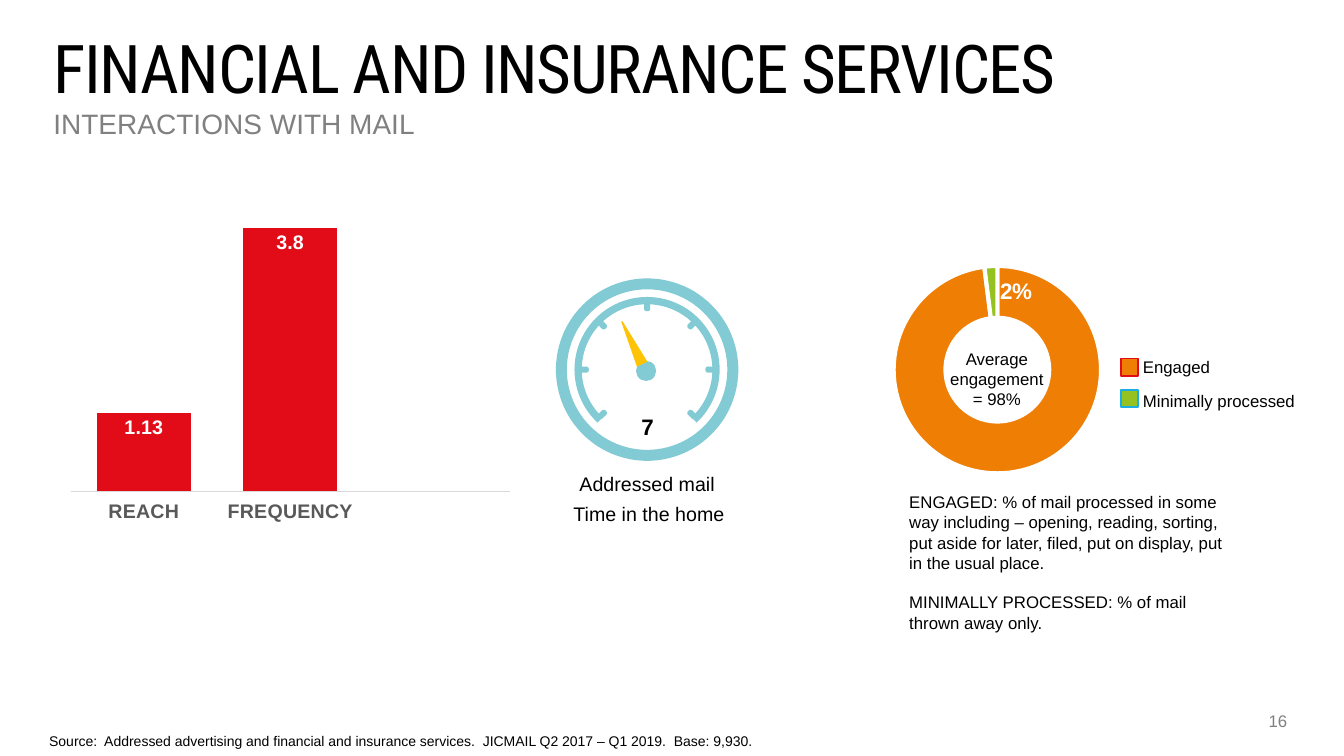
from math import cos, radians, sin

from pptx import Presentation
from pptx.chart.data import CategoryChartData
from pptx.dml.color import RGBColor
from pptx.enum.chart import XL_CHART_TYPE as ChartType, XL_LABEL_POSITION as LabelPosition
from pptx.enum.chart import XL_TICK_LABEL_POSITION as TickLabels, XL_TICK_MARK as TickMark
from pptx.enum.shapes import MSO_SHAPE as Preset
from pptx.enum.text import MSO_ANCHOR as Anchor, MSO_AUTO_SIZE as AutoSize, PP_ALIGN as Align
from pptx.oxml import parse_xml
from pptx.oxml.ns import nsdecls
from pptx.util import Inches, Pt

BLACK, WHITE, GRAY = "000000", "FFFFFF", "808080"
AXIS_TEXT, AXIS_LINE = "595959", "D9D9D9"
RED, ORANGE, GREEN, BLUE = "E20C18", "EF7E05", "95C121", "1BACE4"
TEAL, YELLOW = "82CBD4", "FDC304"


def color(value):
    return RGBColor.from_string(value)


def cells(*counts):
    """Lengths on a grid of 160 columns by 90 rows of square cells."""
    return [Inches(count / 12) for count in counts]


def manual_layout(inner=False, **shares):
    target = '<c:layoutTarget val="inner"/><c:xMode val="edge"/><c:yMode val="edge"/>' if inner else ""
    values = "".join(f'<c:{name} val="{share}"/>' for name, share in shares.items())
    return parse_xml(f'<c:layout {nsdecls("c")}><c:manualLayout>{target}{values}'
                     "</c:manualLayout></c:layout>")


class SlideBuilder:
    font_name = "Arial"

    def __init__(self, presentation):
        self.slide = presentation.slides.add_slide(presentation.slide_layouts[6])

    def style(self, font, size, fill=BLACK, bold=False, name=None):
        font.name = name or self.font_name
        font.size = Pt(size)
        font.bold = bold
        font.color.rgb = color(fill)

    def text(self, place, *lines, size=12, fill=BLACK, bold=False, name=None,
             align=Align.LEFT, fit=False, wrap=True, line_spacing=None, gap=0):
        """Add a text box; a fitted one keeps its insets and grows with its text."""
        frame = self.slide.shapes.add_textbox(*cells(*place)).text_frame
        frame.word_wrap = wrap
        frame.vertical_anchor = Anchor.TOP
        if fit:
            frame.auto_size = AutoSize.SHAPE_TO_FIT_TEXT
        else:
            frame.margin_left = frame.margin_top = frame.margin_right = frame.margin_bottom = 0
        for index, line in enumerate(lines):
            paragraph = frame.add_paragraph() if index else frame.paragraphs[0]
            paragraph.text = line
            paragraph.alignment = align
            if line_spacing:
                paragraph.line_spacing = line_spacing
            if index and gap:
                paragraph.space_before = Pt(gap)
            self.style(paragraph.font, size, fill, bold, name)
        return frame

    def label(self, place, line, **options):
        return self.text(place, line, fit=True, wrap=False, **options)

    def shape(self, preset, place, fill, line=None, rotation=0, adjustments=()):
        shape = self.slide.shapes.add_shape(preset, *cells(*place))
        shape.shadow.inherit = False
        shape.fill.solid()
        shape.fill.fore_color.rgb = color(fill)
        if line:
            shape.line.color.rgb = color(line)
            shape.line.width = Pt(1)
        else:
            shape.line.fill.background()
        shape.rotation = rotation
        for index, value in enumerate(adjustments):
            shape.adjustments[index] = value

    def centered(self, preset, x, y, width, height, **options):
        self.shape(preset, (x - width / 2, y - height / 2, width, height), TEAL, **options)

    def chart(self, kind, place, categories, values, number_format, plot_area):
        data = CategoryChartData(number_format=number_format)
        data.categories = categories
        data.add_series("Series 1", values)
        chart = self.slide.shapes.add_chart(kind, *cells(*place), data).chart
        chart.has_title = chart.has_legend = False
        self.style(chart.font, 10)
        area = chart.plots[0]._element.getparent()
        for layout in area.findall("{*}layout"):
            area.remove(layout)
        area.insert(0, manual_layout(inner=True, **plot_area))
        return chart

    def value_labels(self, plot, size):
        plot.has_data_labels = True
        labels = plot.data_labels
        labels.show_value = True
        labels.show_percentage = False
        self.style(labels.font, size, WHITE, bold=True)
        return labels

    def column_chart(self, place, categories, values):
        chart = self.chart(ChartType.COLUMN_CLUSTERED, place, categories, values, "General",
                           dict(x=0.02, y=0.02, w=0.96, h=0.87))
        plot = chart.plots[0]
        plot.gap_width = 55
        plot.vary_by_categories = False
        bars = plot.series[0].format.fill
        bars.solid()
        bars.fore_color.rgb = color(RED)
        self.value_labels(plot, 14).position = LabelPosition.INSIDE_END
        axis = chart.value_axis
        axis.minimum_scale, axis.maximum_scale = 0, 4
        axis.has_major_gridlines = axis.visible = False
        axis = chart.category_axis
        axis.major_tick_mark = axis.minor_tick_mark = TickMark.NONE
        axis.tick_label_position = TickLabels.LOW
        axis.format.line.color.rgb = color(AXIS_LINE)
        axis.format.line.width = Pt(0.75)
        self.style(axis.tick_labels.font, 14, AXIS_TEXT, bold=True)

    def doughnut(self, place, values, fills):
        chart = self.chart(ChartType.DOUGHNUT, place, ["1", "2"], values, "0%",
                           dict(x=0.19, y=0.06, w=0.62, h=0.83))
        plot = chart.plots[0]
        labels = self.value_labels(plot, 16)
        labels.number_format = "0%"
        labels.number_format_is_linked = False
        for index, fill in enumerate(fills):
            part = plot.series[0].points[index].format
            part.fill.solid()
            part.fill.fore_color.rgb = color(fill)
            part.line.color.rgb = color(WHITE)
            part.line.width = Pt(3)
        small_label = plot.series[0].points[1].data_label
        self.style(small_label.font, 16, WHITE, bold=True)
        small_label._get_or_add_dLbl().insert(1, manual_layout(x=0.07, y=0))

    def gauge(self, x, y):
        ring, scale, tick_radius = 21.72, 17.28, 7.55
        self.centered(Preset.DONUT, x, y, ring, ring, adjustments=[0.06])
        # Angles are adjusted in units of 100000 / 60000 of a degree.
        self.centered(Preset.BLOCK_ARC, x, y, scale, scale,
                      adjustments=[133 * 0.6, 47 * 0.6, 0.05])
        for angle in range(135, 406, 45):
            self.centered(Preset.ROUNDED_RECTANGLE, x + tick_radius * cos(radians(angle)),
                          y + tick_radius * sin(radians(angle)), 1.2, 0.72,
                          rotation=angle % 360, adjustments=[0.4])
        self.centered(Preset.OVAL, x - 0.12, y + 0.16, 2.4, 2.4)
        self.shape(Preset.ISOSCELES_TRIANGLE, (x - 2.4, y - 5.96, 1.2, 5.52),
                   YELLOW, line=YELLOW, rotation=334.6)


def main():
    presentation = Presentation()
    presentation.slide_width, presentation.slide_height = cells(160, 90)
    builder = SlideBuilder(presentation)

    title = builder.text((6.36, 5.4, 146.4, 6.24), "FINANCIAL AND INSURANCE SERVICES",
                         size=48, name="Roboto Condensed", line_spacing=Pt(44))
    title.paragraphs[0].runs[0].font._element.set("spc", "-100")
    builder.text((6.36, 13.08, 146.76, 3.48), "INTERACTIONS WITH MAIL",
                 size=20, fill=GRAY, line_spacing=0.9)
    builder.text((147.6, 84.6, 5.64, 2.4), "16", fill=GRAY, align=Align.RIGHT)

    builder.column_chart((7.32, 24.72, 54.48, 37.92),
                         ["REACH", "FREQUENCY", ""], [1.13, 3.8, None])

    builder.gauge(77.04, 44)
    builder.label((75.12, 48.6, 3.96, 4.44), "7", size=16, bold=True, align=Align.CENTER)
    builder.label((67.8, 55.56, 18.6, 4.08), "Addressed mail", size=14)
    builder.label((67.08, 59.16, 20.52, 4.08), "Time in the home", size=14)

    builder.doughnut((98.76, 29.88, 39.96, 29.76), [0.98, 0.02], [ORANGE, GREEN])
    legend = [("Engaged", ORANGE, RED, 42.72, 41.88, 10.44),
              ("Minimally processed", GREEN, BLUE, 46.44, 45.96, 20.64)]
    for name, fill, line, key_top, label_top, width in legend:
        builder.shape(Preset.RECTANGLE, (133.44, key_top, 2.04, 2.04), fill, line=line)
        builder.label((134.88, label_top, width, 3.6), name)
    builder.text((108.24, 58.56, 39.36, 9.72),
                 "ENGAGED: % of mail processed in some way including – opening, reading, sorting, "
                 "put aside for later, filed, put on display, put in the usual place.",
                 "MINIMALLY PROCESSED: % of mail thrown away only.", gap=14)
    builder.text((111.36, 40.92, 14.64, 8.52), "Average engagement = 98%",
                 align=Align.CENTER, fit=True)

    builder.label((4.68, 86.64, 86.4, 3.24),
                  "Source:  Addressed advertising and financial and insurance services.  "
                  "JICMAIL Q2 2017 – Q1 2019.  Base: 9,930.", size=10)
    presentation.save("out.pptx")


if __name__ == "__main__":
    main()
